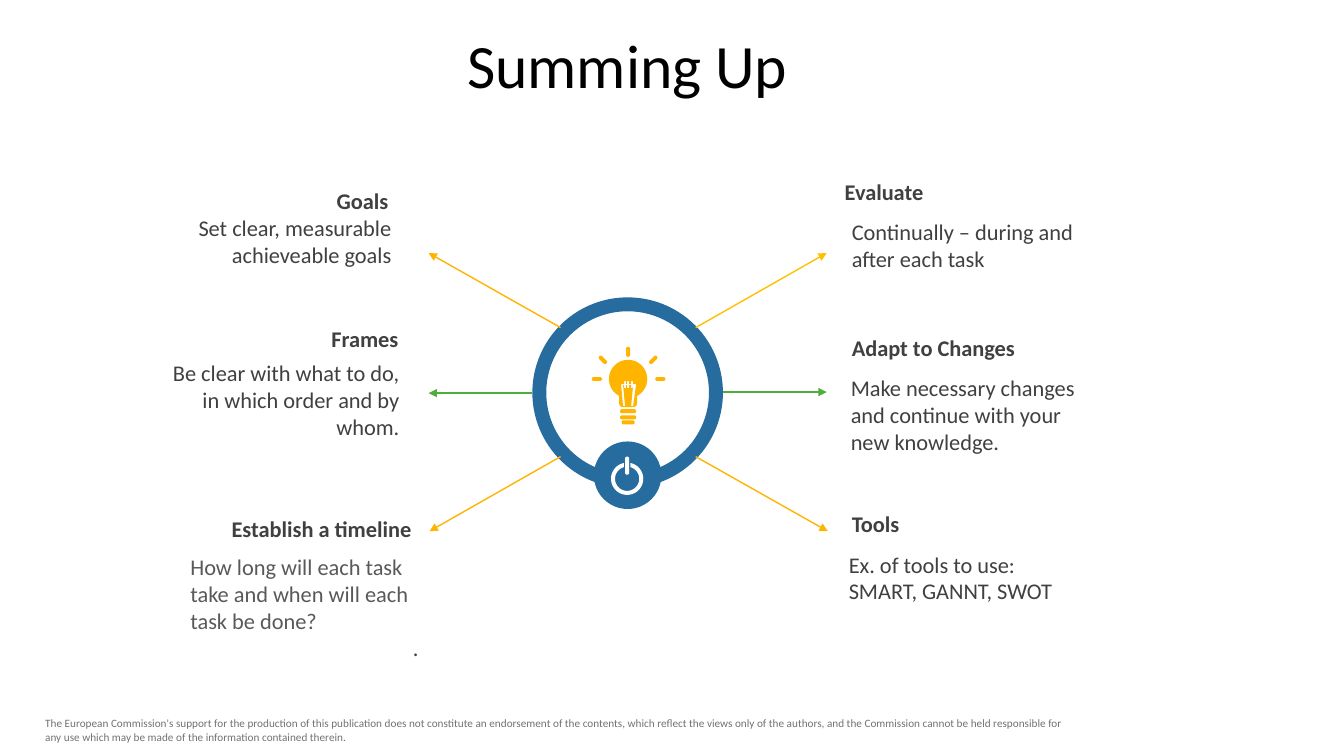
from math import asin, copysign, cos, degrees, radians, sin

from pptx import Presentation
from pptx.dml.color import RGBColor
from pptx.enum.shapes import MSO_CONNECTOR, MSO_SHAPE as SHP
from pptx.enum.text import MSO_ANCHOR as ANC, PP_ALIGN as AL
from pptx.oxml.ns import qn
from pptx.util import Inches, Pt
from lxml.etree import SubElement

BLUE = RGBColor(0x26, 0x6C, 0x9F)
GOLD = RGBColor(0xFF, 0xB5, 0x00)
AMBER = RGBColor(0xFF, 0xC0, 0x00)
GREEN = RGBColor(0x4E, 0xAE, 0x3A)
WHITE = RGBColor(0xFF, 0xFF, 0xFF)
BLACK = RGBColor(0, 0, 0)
DARK = RGBColor(0x40, 0x40, 0x40)
GRAY = RGBColor(0x59, 0x59, 0x59)
NOTE = RGBColor(0x76, 0x71, 0x71)

prs = Presentation()
prs.slide_width, prs.slide_height = Inches(13.33), Inches(7.5)
slide = prs.slides.add_slide(prs.slide_layouts[6])
shapes = slide.shapes


def text(words, box, size=16, color=DARK, bold=False, align=AL.LEFT,
         anchor=ANC.MIDDLE, spacing=None):
    frame = shapes.add_textbox(*map(Inches, box)).text_frame
    frame.word_wrap = True
    frame.vertical_anchor = anchor
    para = frame.paragraphs[0]
    para.text = words
    para.alignment = align
    para.line_spacing = spacing
    font = para.font
    font.name, font.size, font.bold = "Calibri", Pt(size), bold
    font.color.rgb = color
    return frame


def pill(x, y, size, turn=0):
    """List the outline points of a round-ended bar centred on x, y."""
    r, half, tilt = 0.02, size / 2 - 0.02, radians(turn)
    points = []
    for step in range(24):
        angle = radians(step * 15 + 7.5)
        u = copysign(half, cos(angle)) + r * cos(angle)
        v = r * sin(angle)
        points.append((x + u * cos(tilt) - v * sin(tilt),
                       y + u * sin(tilt) + v * cos(tilt)))
    return points


text("The European Commission's support for the production of this publication "
     "does not constitute an endorsement of the contents, which reflect the views "
     "only of the authors, and the Commission cannot be held responsible for any "
     "use which may be made of the information contained therein.",
     (0.35, 7.06, 10.46, 0.37), size=8, color=NOTE, anchor=ANC.TOP)
text("Summing Up", (2.86, 0.3, 6.73, 0.79), size=44, color=BLACK,
     align=AL.CENTER, anchor=ANC.TOP, spacing=0.9)

# Hub
ring = shapes.add_shape(SHP.DONUT, *map(Inches, (5.28, 2.95, 1.89, 1.89)))
ring.adjustments[0] = 0.073
disc = shapes.add_shape(SHP.OVAL, *map(Inches, (5.89, 4.38, 0.67, 0.67)))
for shape in (ring, disc):
    shape.shadow.inherit = False
    shape.fill.solid()
    shape.fill.fore_color.rgb = BLUE
    shape.line.fill.background()

# Light bulb: glass with neck, filament cut out, rays and screw base
cx, cy, r = 6.23, 3.76, 0.19
gap = degrees(asin(0.09 / r))
glass = []
for step in range(41):
    angle = radians(90 + gap + (360 - 2 * gap) * step / 40)
    glass.append((cx + r * cos(angle), cy + r * sin(angle)))
glass += [(6.32, 4), (6.31, 4.03), (6.28, 4.04), (6.18, 4.04), (6.15, 4.03), (6.14, 4)]

teeth = (6.2, 6.23, 6.27)
wire = [(6.16, 3.81)]
for x in teeth:
    wire += [(x - 0.01, 3.81), (x - 0.01, 3.78), (x + 0.01, 3.78), (x + 0.01, 3.81)]
wire += [(6.31, 3.81), (6.28, 4.03), (6.26, 4.03), (6.28, 3.82)]
for x in reversed(teeth):
    wire += [(x + 0.01, 3.82), (x + 0.01, 3.85), (x - 0.01, 3.85), (x - 0.01, 3.82)]
wire += [(6.18, 3.82), (6.2, 4.03), (6.18, 4.03)]

bulb = [glass, wire, pill(5.92, 3.76, 0.1), pill(6.55, 3.76, 0.1),
        pill(6.23, 3.49, 0.1, 90), pill(5.98, 3.57, 0.1, 45),
        pill(6.48, 3.57, 0.1, -45), pill(6.23, 4.08, 0.16),
        pill(6.23, 4.14, 0.16), pill(6.23, 4.19, 0.13)]

# Power sign: open ring and stem
arc = []
for radius, start, end in ((0.16, -78, 258), (0.12, 254, -74)):
    for step in range(41):
        angle = radians(start + (end - start) * step / 40)
        arc.append((6.22 + radius * cos(angle), 4.75 + radius * sin(angle)))
power = [arc, pill(6.22, 4.62, 0.18, 90)]

for outlines, color in ((bulb, GOLD), (power, WHITE)):
    pen = shapes.build_freeform()
    for points in outlines:
        first, *rest = [(Inches(x), Inches(y)) for x, y in points]
        pen.move_to(*first)
        pen.add_line_segments(rest, close=True)
    icon = pen.convert_to_shape()
    icon.shadow.inherit = False
    icon.fill.solid()
    icon.fill.fore_color.rgb = color
    icon.line.fill.background()

arrows = [
    (5.28, 3.9, 4.25, 3.9, GREEN), (7.17, 3.89, 8.2, 3.89, GREEN),
    (5.56, 3.25, 4.25, 2.51, GOLD), (6.9, 3.25, 8.2, 2.51, AMBER),
    (6.9, 4.53, 8.21, 5.27, GOLD), (5.56, 4.53, 4.26, 5.27, GOLD),
]
for *ends, color in arrows:
    arrow = shapes.add_connector(MSO_CONNECTOR.STRAIGHT, *map(Inches, ends))
    arrow.line.color.rgb, arrow.line.width = color, Pt(1)
    SubElement(arrow.line._get_or_add_ln(), qn("a:tailEnd"), type="triangle")
    SubElement(arrow._element.spPr, qn("a:effectLst"))

heads = [
    ("Goals", 1.49, 1.8, AL.RIGHT),
    ("Frames", 1.59, 3.17, AL.RIGHT),
    ("Establish a timeline", 1.72, 5.06, AL.RIGHT),
    ("Evaluate", 8.28, 1.72, AL.LEFT),
    ("Adapt to Changes", 8.35, 3.26, AL.LEFT),
    ("Tools", 8.35, 5.01, AL.LEFT),
]
for words, x, y, align in heads:
    text(words, (x, y, 2.46, 0.37), bold=True, align=align)

bodies = [
    ("Set clear, measurable achieveable goals", (1.3, 1.93, 2.68, 0.92), AL.RIGHT),
    ("Be clear with what to do, in which order and by whom.",
     (1.6, 3.51, 2.46, 0.91), AL.RIGHT),
    ("Continually – during and after each task", (8.35, 2.11, 2.46, 0.64), AL.LEFT),
    ("Make necessary changes and continue with your new knowledge.",
     (8.34, 3.66, 2.46, 0.91), AL.LEFT),
    ("Ex. of tools to use: SMART, GANNT, SWOT", (8.32, 5.41, 2.46, 0.64), AL.LEFT),
]
for words, box, align in bodies:
    text(words, box, align=align)

plan = text("How long will each task take and when will each task be done?",
            (1.79, 5.43, 2.46, 1.18), color=GRAY)
dot = plan.add_paragraph()
dot.text, dot.alignment = ".", AL.RIGHT
dot.font.name, dot.font.size = "Calibri", Pt(16)
dot.font.color.rgb = DARK

prs.save("out.pptx")
